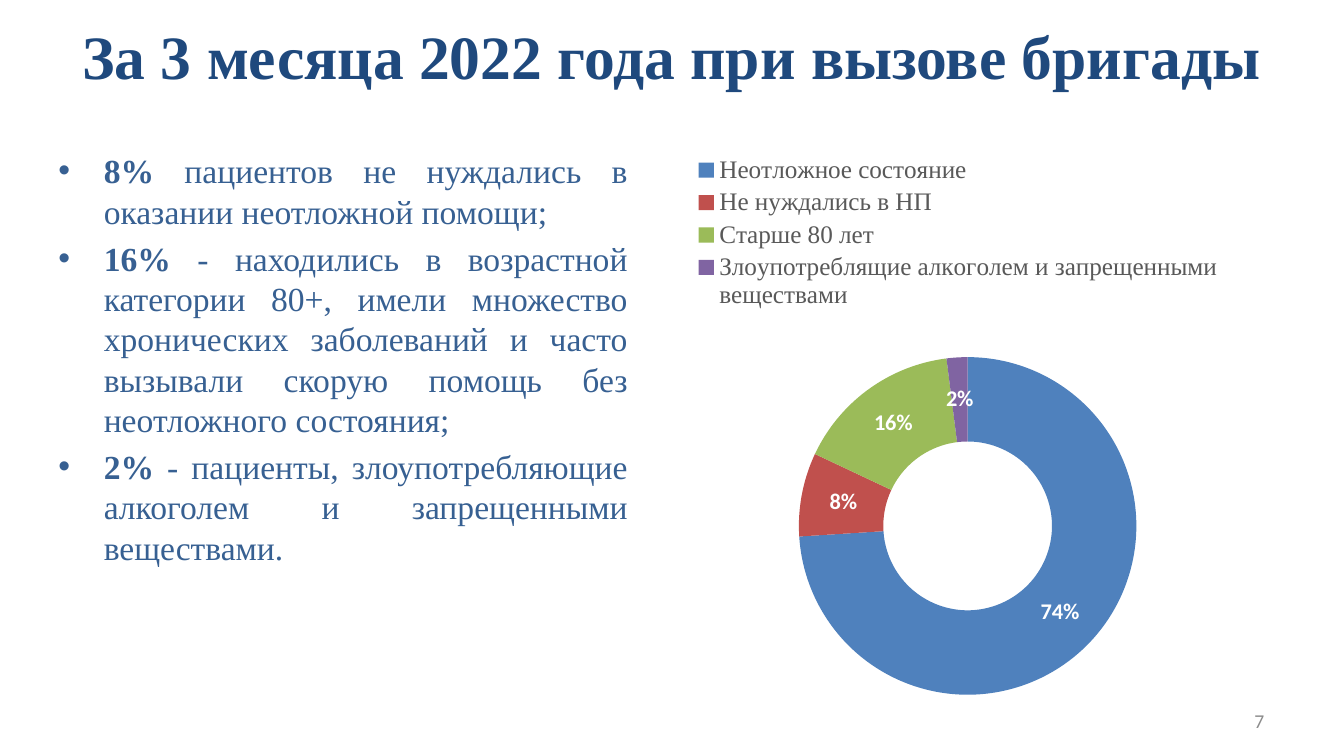
from lxml import etree
from pptx import Presentation
from pptx.chart.data import CategoryChartData
from pptx.dml.color import RGBColor
from pptx.enum.chart import XL_CHART_TYPE as CHART, XL_LEGEND_POSITION as LEGEND
from pptx.enum.text import MSO_ANCHOR as ANCHOR, PP_ALIGN as ALIGN
from pptx.oxml import parse_xml
from pptx.oxml.ns import nsdecls, qn
from pptx.util import Pt

PX = 9144
SERIF, SANS = "Times New Roman", "Calibri"
SHARES = [
    ("Неотложное состояние", 74, "4F81BD"),
    ("Не нуждались в НП", 8, "C0504D"),
    ("Старше 80 лет", 16, "9BBB59"),
    ("Злоупотреблящие алкоголем и запрещенными веществами", 2, "8064A2"),
]
FINDINGS = [
    ("8%", " пациентов не нуждались в оказании неотложной помощи;"),
    ("16%", " - находились в возрастной категории 80+, имели множество хронических "
            "заболеваний и часто вызывали скорую помощь без неотложного состояния;"),
    ("2%", " - пациенты, злоупотребляющие алкоголем и запрещенными веществами."),
]


def px(*lengths):
    return [n * PX for n in lengths]


def rgb(color):
    return RGBColor.from_string(color)


def style(font, size, color, name=SERIF, bold=False):
    font.size, font.name, font.bold = Pt(size), name, bold
    font.color.rgb = rgb(color)


def add_run(p, text, **fmt):
    r = p.add_run()
    r.text = text
    style(r.font, **fmt)


def add_box(s, box, anchor=ANCHOR.TOP):
    tf = s.shapes.add_textbox(*px(*box)).text_frame
    tf.word_wrap = True
    tf.vertical_anchor = anchor
    tf.margin_left = tf.margin_right = 12 * PX
    tf.margin_top = tf.margin_bottom = 6 * PX
    return tf


def add_text(s, box, text, align, **fmt):
    p = add_box(s, box, ANCHOR.MIDDLE).paragraphs[0]
    p.alignment = align
    add_run(p, text, **fmt)


def add_bullets(s, box, items, indent, **fmt):
    tf = add_box(s, box)
    for i, (share, text) in enumerate(items):
        p = tf.add_paragraph() if i else tf.paragraphs[0]
        p.alignment = ALIGN.JUSTIFY
        pPr = p._p.get_or_add_pPr()
        pPr.set("marL", str(indent * PX))
        pPr.set("indent", str(-indent * PX))
        etree.SubElement(pPr, qn("a:buFont")).set("typeface", "Arial")
        etree.SubElement(pPr, qn("a:buChar")).set("char", "•")
        if i:
            p.space_before = Pt(4.8)
        add_run(p, share, bold=True, **fmt)
        add_run(p, text, **fmt)


def layout(x, y, w, h, target=""):
    return parse_xml(
        f'<c:layout {nsdecls("c")}><c:manualLayout>{target}'
        '<c:xMode val="edge"/><c:yMode val="edge"/>'
        f'<c:x val="{x}"/><c:y val="{y}"/><c:w val="{w}"/><c:h val="{h}"/>'
        '</c:manualLayout></c:layout>')


def add_doughnut(s, box, shares):
    data = CategoryChartData()
    data.categories = [name for name, _, _ in shares]
    data.add_series("Series 1", [value for _, value, _ in shares])
    chart = s.shapes.add_chart(CHART.DOUGHNUT, *px(*box), data).chart
    chart.has_title = False
    style(chart.font, 10, "000000", SANS)

    chart.has_legend = True
    legend = chart.legend
    legend.position, legend.include_in_layout = LEGEND.TOP, False
    style(legend.font, 18, "595959")
    legend._element.find(qn("c:legendPos")).addnext(layout(0.08, 0.02, 0.84, 0.35))

    area = chart._chartSpace.chart.plotArea
    for old in area.findall(qn("c:layout")):
        area.remove(old)
    area.insert(0, layout(0.25, 0.38, 0.53, 0.63, '<c:layoutTarget val="inner"/>'))

    plot = chart.plots[0]
    plot.vary_by_categories = True
    plot._element.find(qn("c:holeSize")).set("val", "50")
    for i, (_, _, color) in enumerate(shares):
        fill = plot.series[0].points[i].format.fill
        fill.solid()
        fill.fore_color.rgb = rgb(color)
    plot.has_data_labels = True
    labels = plot.data_labels
    labels.show_value, labels.show_percentage = False, True
    labels.number_format, labels.number_format_is_linked = "0%", False
    style(labels.font, 16, "FFFFFF", SANS, bold=True)


def main():
    """Build the slide on ambulance calls and save it."""
    prs = Presentation()
    prs.slide_width, prs.slide_height = px(1334, 750)
    s = prs.slides.add_slide(prs.slide_layouts[6])
    add_text(s, (67, -8, 1200, 125), "За 3 месяца 2022 года при вызове бригады",
             ALIGN.CENTER, size=44, color="1F497D", bold=True)
    add_doughnut(s, (635, 143, 632, 553), SHARES)
    add_text(s, (956, 695, 311, 40), "7", ALIGN.RIGHT, size=14, color="8C8C8C", name=SANS)
    add_bullets(s, (46, 143, 589, 429), FINDINGS, 45, size=24, color="376092")
    prs.save("out.pptx")


if __name__ == "__main__":
    main()
